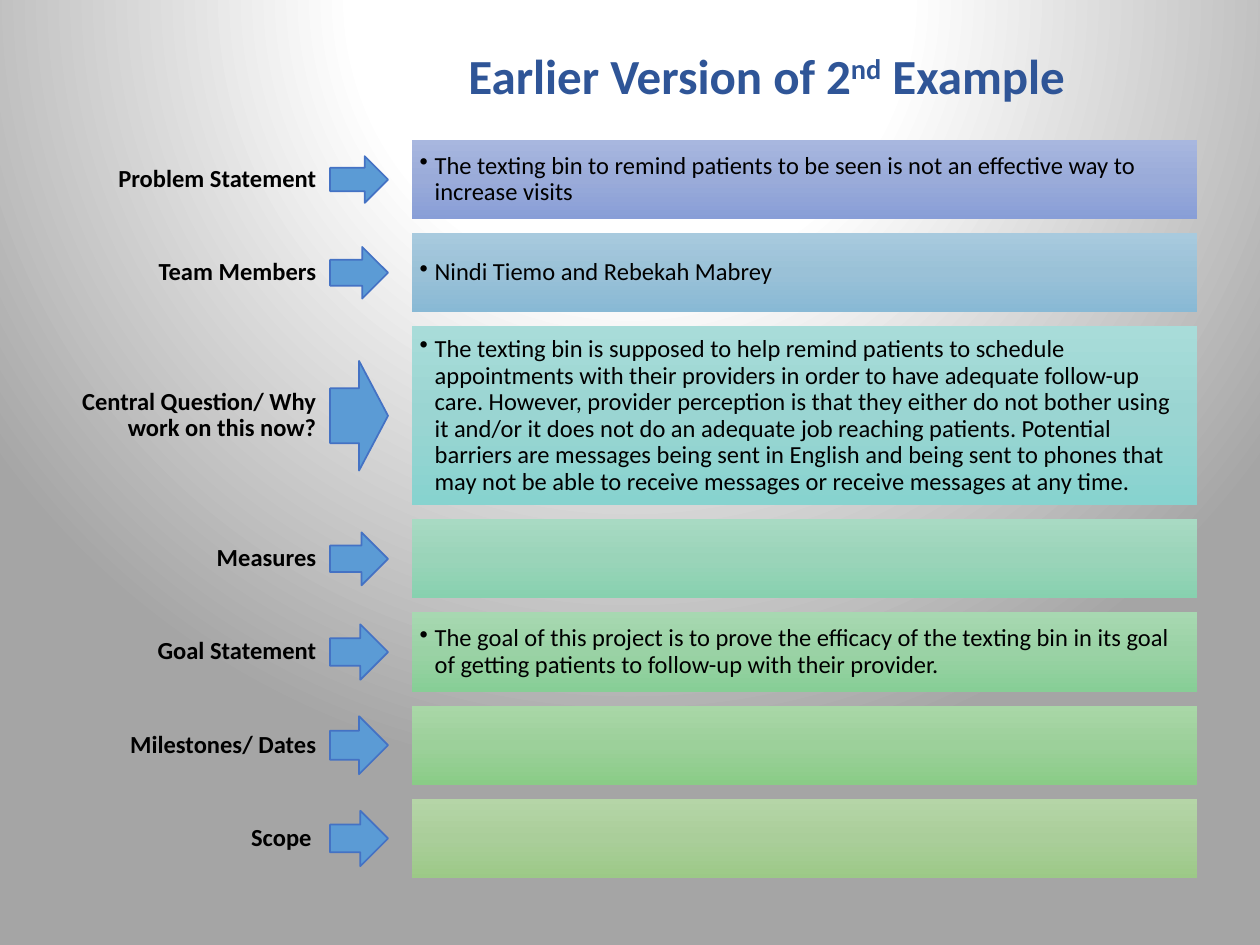
from dataclasses import dataclass

from lxml import etree
from pptx import Presentation
from pptx.dml.color import RGBColor
from pptx.enum.shapes import MSO_SHAPE
from pptx.enum.text import MSO_ANCHOR, PP_ALIGN
from pptx.oxml.ns import qn
from pptx.util import Inches, Pt

RECTANGLE = MSO_SHAPE.RECTANGLE
RIGHT_ARROW = MSO_SHAPE.RIGHT_ARROW
MIDDLE = MSO_ANCHOR.MIDDLE
LEFT, CENTER, RIGHT = PP_ALIGN.LEFT, PP_ALIGN.CENTER, PP_ALIGN.RIGHT


@dataclass(frozen=True)
class Theme:
    font: str = "Calibri"
    title_size: int = 28
    body_size: int = 14
    small_size: int = 12
    title: str = "2F5597"
    text: str = "000000"
    arrow_fill: str = "5B9BD5"
    arrow_line: str = "4472C4"
    background: tuple = ((0, "FFFFFF"), (35, "FFFFFF"), (100, "A5A5A5"))


@dataclass(frozen=True)
class Row:
    label: str
    detail: str
    arrow_height: float
    colors: tuple
    height: float = 0.63


THEME = Theme()

LABEL_LEFT, LABEL_WIDTH, LABEL_HEIGHT = 0.33, 2.29, 0.63
ARROW_LEFT, ARROW_WIDTH = 2.62, 0.46
BAR_LEFT, BAR_WIDTH = 3.27, 6.23
FIRST_TOP, ROW_GAP = 1.11, 0.11

ROWS = (
    Row("Problem Statement",
        "The texting bin to remind patients to be seen is not an effective way "
        "to increase visits",
        0.37, ("A8B7DF", "9AABD9", "889ED7")),
    Row("Team Members", "Nindi Tiemo and Rebekah Mabrey",
        0.41, ("A8CADE", "9AC1D7", "88B9D5")),
    Row("Central Question/ Why work on this now?",
        "The texting bin is supposed to help remind patients to schedule "
        "appointments with their providers in order to have adequate follow-up "
        "care. However, provider perception is that they either do not bother "
        "using it and/or it does not do an adequate job reaching patients. "
        "Potential barriers are messages being sent in English and being sent "
        "to phones that may not be able to receive messages or receive messages "
        "at any time.",
        0.87, ("A8DCD9", "9AD5D2", "87D3CF"), 1.42),
    Row("Measures", "", 0.42, ("A8DAC3", "9AD4B9", "87D1AF")),
    Row("Goal Statement",
        "The goal of this project is to prove the efficacy of the texting bin "
        "in its goal of getting patients to follow-up with their provider.",
        0.44, ("A7D8B1", "9AD2A5", "87CE96")),
    Row("Milestones/ Dates", "", 0.46, ("A9D7A7", "9CD09A", "8ACC87")),
    Row("Scope", "", 0.44, ("B5D5A7", "AACE9A", "9CC987")),
)


def set_gradient_stops(owner, stops):
    """Replace the stops of the gradient inside owner and return the gradient."""
    gradient = owner.find(".//" + qn("a:gradFill"))
    stop_list = gradient.find(qn("a:gsLst"))
    for old_stop in list(stop_list):
        stop_list.remove(old_stop)
    for position, color in stops:
        stop = etree.SubElement(stop_list, qn("a:gs"), pos=str(position * 1000))
        etree.SubElement(stop, qn("a:srgbClr"), val=color)
    return gradient


def paint_background(slide):
    """Fill the slide with a circular gradient centred above its top edge."""
    slide.background.fill.gradient()
    gradient = set_gradient_stops(slide.element, THEME.background)
    gradient.remove(gradient.find(qn("a:lin")))
    circle = etree.SubElement(gradient, qn("a:path"), path="circle")
    etree.SubElement(circle, qn("a:fillToRect"),
                     l="50000", t="-80000", r="50000", b="180000")


def set_frame(shape, horizontal, vertical):
    frame = shape.text_frame
    frame.word_wrap = True
    frame.vertical_anchor = MIDDLE
    frame.margin_left = frame.margin_right = Inches(horizontal)
    frame.margin_top = frame.margin_bottom = Inches(vertical)
    return frame.paragraphs[0]


def add_run(paragraph, text, size, color, bold=False):
    run = paragraph.add_run()
    run.text = text
    run.font.name = THEME.font
    run.font.size = Pt(size)
    run.font.bold = bold
    run.font.color.rgb = RGBColor.from_string(color)
    return run


def add_title(slide):
    box = slide.shapes.add_textbox(Inches(3.42), Inches(0.31),
                                   Inches(5.33), Inches(0.57))
    box.text_frame.word_wrap = True
    paragraph = box.text_frame.paragraphs[0]
    paragraph.alignment = CENTER
    for text, raised in (("Earlier Version of 2", False), ("nd", True),
                         (" Example", False)):
        run = add_run(paragraph, text, THEME.title_size, THEME.title, bold=True)
        if raised:
            run.font._element.set("baseline", "30000")


def add_label(slide, text, middle):
    box = slide.shapes.add_textbox(
        Inches(LABEL_LEFT), Inches(middle - LABEL_HEIGHT / 2),
        Inches(LABEL_WIDTH), Inches(LABEL_HEIGHT))
    paragraph = set_frame(box, 0.11, 0.04)
    paragraph.alignment = RIGHT
    paragraph.line_spacing = 0.9
    add_run(paragraph, text, THEME.body_size, THEME.text, bold=True)
    return paragraph


def add_arrow(slide, middle, height):
    arrow = slide.shapes.add_shape(
        RIGHT_ARROW, Inches(ARROW_LEFT), Inches(middle - height / 2),
        Inches(ARROW_WIDTH), Inches(height))
    arrow.shadow.inherit = False
    arrow.fill.solid()
    arrow.fill.fore_color.rgb = RGBColor.from_string(THEME.arrow_fill)
    arrow.line.color.rgb = RGBColor.from_string(THEME.arrow_line)
    arrow.line.width = Pt(1)


def add_bar(slide, row, top):
    """Add the gradient bar of a row, with its detail as a bullet if it has one."""
    bar = slide.shapes.add_shape(RECTANGLE, Inches(BAR_LEFT), Inches(top),
                                 Inches(BAR_WIDTH), Inches(row.height))
    bar.shadow.inherit = False
    bar.line.fill.background()
    bar.fill.gradient()
    set_gradient_stops(bar.element, zip((0, 50, 100), row.colors))
    bar.fill.gradient_angle = 270
    if row.detail:
        paragraph = set_frame(bar, 0.06, 0.06)
        paragraph.alignment = LEFT
        paragraph.line_spacing = 0.9
        properties = paragraph._p.get_or_add_pPr()
        properties.set("marL", str(Inches(0.12)))
        properties.set("indent", str(Inches(-0.12)))
        etree.SubElement(properties, qn("a:buChar"), char="•")
        add_run(paragraph, row.detail, THEME.body_size, THEME.text)


def main():
    presentation = Presentation()
    presentation.slide_width = Inches(10)
    presentation.slide_height = Inches(7.5)
    slide = presentation.slides.add_slide(presentation.slide_layouts[6])

    paint_background(slide)
    top = FIRST_TOP
    for row in ROWS:
        middle = top + row.height / 2
        label = add_label(slide, row.label, middle)
        add_arrow(slide, middle, row.arrow_height)
        add_bar(slide, row, top)
        top += row.height + ROW_GAP
    add_run(label, " ", THEME.small_size, THEME.text)
    add_title(slide)

    presentation.save("out.pptx")


if __name__ == "__main__":
    main()
